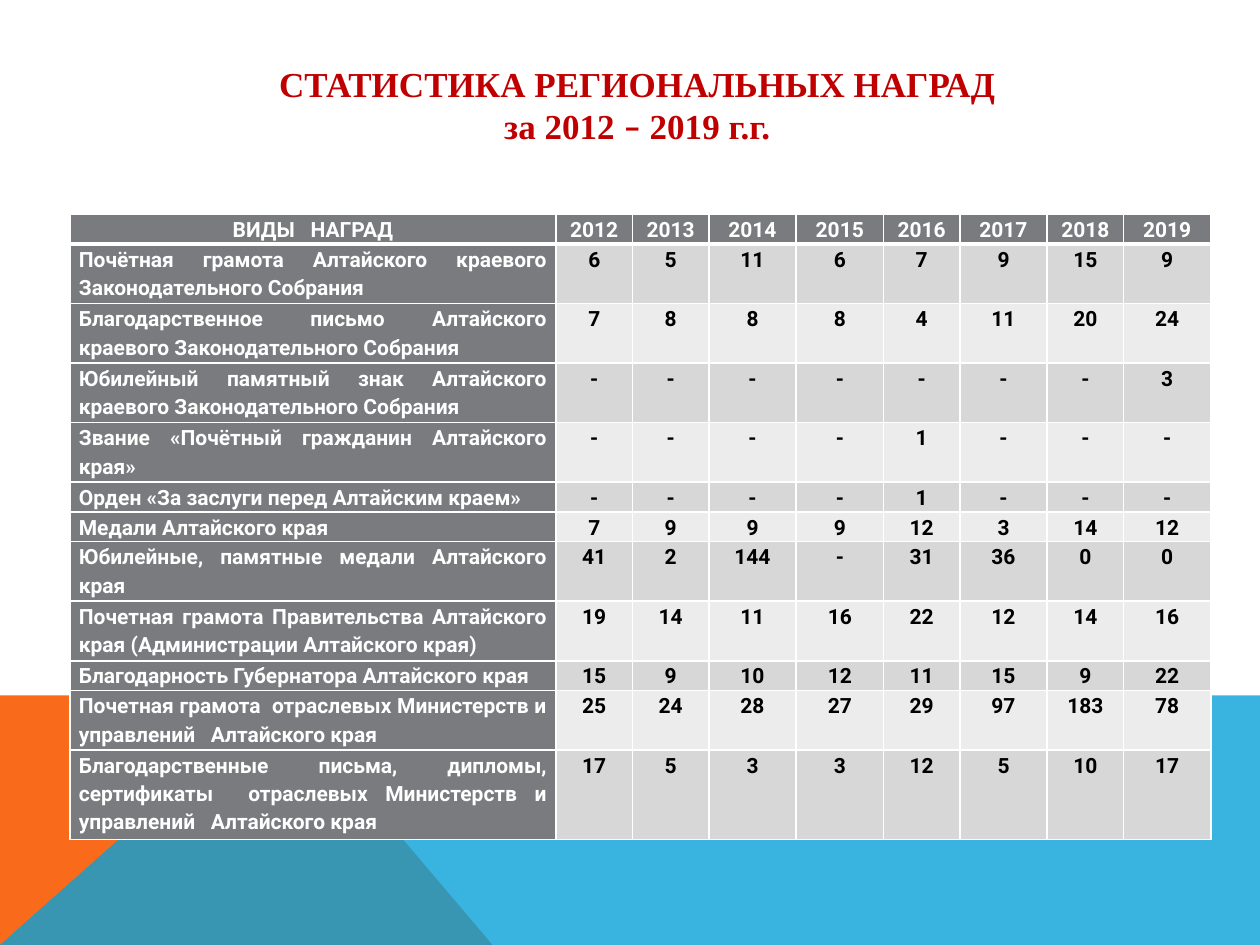
from typing import NamedTuple

from lxml import etree
from pptx import Presentation
from pptx import util as u
from pptx.dml.color import RGBColor
from pptx.enum import text
from pptx.oxml.ns import qn

ROBOTO, TIMES, CALIBRI = "Roboto", "Times New Roman", "Calibri"
WHITE, BLACK, RED = "FFFFFF", "000000", "C00000"
GREY, BANDS = "797B7E", ("D7D7D8", "ECECEC")
ORANGE, BLUE = "F96A1B", "08A1D9"
CENTER, JUSTIFY = text.PP_ALIGN.CENTER, text.PP_ALIGN.JUSTIFY
WIDTH, HEIGHT = 25.4, 19.05
LINE_HEIGHT = 0.6
COLUMNS = (9.8, 1.54, 1.54, 1.76, 1.76, 1.54, 1.76, 1.54, 1.76)


class Award(NamedTuple):
    name: str
    lines: int
    counts: str


class Band(NamedTuple):
    points: tuple[tuple[float, float], ...]
    color: str
    opacity: int


HEADER = Award("ВИДЫ   НАГРАД", 1, "2012 2013 2014 2015 2016 2017 2018 2019")
AWARDS = (
    Award("Почётная грамота Алтайского краевого Законодательного Собрания",
          2, "6 5 11 6 7 9 15 9"),
    Award("Благодарственное письмо Алтайского краевого Законодательного Собрания",
          2, "7 8 8 8 4 11 20 24"),
    Award("Юбилейный памятный знак Алтайского краевого Законодательного Собрания",
          2, "- - - - - - - 3"),
    Award("Звание «Почётный гражданин Алтайского края»", 2, "- - - - 1 - - -"),
    Award("Орден «За заслуги перед Алтайским краем»", 1, "- - - - 1 - - -"),
    Award("Медали Алтайского края", 1, "7 9 9 9 12 3 14 12"),
    Award("Юбилейные, памятные медали Алтайского края", 2, "41 2 144 - 31 36 0 0"),
    Award("Почетная грамота Правительства Алтайского края (Администрации Алтайского края)",
          2, "19 14 11 16 22 12 14 16"),
    Award("Благодарность Губернатора Алтайского края", 1, "15 9 10 12 11 15 9 22"),
    Award("Почетная грамота  отраслевых Министерств и управлений   Алтайского края",
          2, "25 24 28 27 29 97 183 78"),
    Award("Благодарственные письма, дипломы, сертификаты  отраслевых Министерств "
          "и управлений   Алтайского края", 3, "17 5 3 3 12 5 10 17"),
)

BAND_TOP, FOLD = 14.02, 5.66
BANDS_BELOW = (
    Band(((0, HEIGHT), (0, BAND_TOP), (FOLD, BAND_TOP), (9.93, HEIGHT)), ORANGE, 100),
    Band(((0, HEIGHT), (FOLD, BAND_TOP), (WIDTH, BAND_TOP), (WIDTH, HEIGHT)), BLUE, 80),
)


def paint(fill, color: str) -> None:
    fill.solid()
    fill.fore_color.rgb = RGBColor.from_string(color)


def add_run(p, content: str, *, size: float, font: str, color: str) -> None:
    r = p.add_run()
    r.text = content
    r.font.size, r.font.name, r.font.bold = u.Pt(size), font, True
    r.font.color.rgb = RGBColor.from_string(color)


def draw_band(s, band: Band) -> None:
    start, *rest = [(u.Cm(x), u.Cm(y)) for x, y in band.points]
    builder = s.shapes.build_freeform(*start)
    builder.add_line_segments(rest, close=True)
    sp = builder.convert_to_shape()
    sp.shadow.inherit = False
    sp.line.fill.background()
    paint(sp.fill, band.color)
    if band.opacity < 100:
        clr = sp._element.spPr.find(".//" + qn("a:srgbClr"))
        etree.SubElement(clr, qn("a:alpha"), val=str(band.opacity * 1000))


def set_borders(cell, **widths: float) -> None:
    """Give the sides L, R, T and B white lines of the given point widths."""
    tc_pr = cell._tc.get_or_add_tcPr()
    for side, width in widths.items():
        ln = etree.SubElement(tc_pr, qn(f"a:ln{side}"), w=str(u.Pt(width)))
        fill = etree.SubElement(ln, qn("a:solidFill"))
        etree.SubElement(fill, qn("a:srgbClr"), val=WHITE)


def fill_cell(cell, content: str, *, fill: str, color: str, align,
              top: float, bottom: float) -> None:
    cell.margin_left = cell.margin_right = u.Cm(0.18)
    cell.margin_top = cell.margin_bottom = 0
    set_borders(cell, L=1, R=1, T=top, B=bottom)
    paint(cell.fill, fill)
    p = cell.text_frame.paragraphs[0]
    p.alignment, p.line_spacing = align, 1.15
    add_run(p, content, size=12, font=ROBOTO, color=color)


def draw_table(s) -> None:
    rows = (HEADER, *AWARDS)
    height = sum(row.lines for row in rows) * LINE_HEIGHT
    table = s.shapes.add_table(len(rows), len(COLUMNS), u.Cm(1.41), u.Cm(4.32),
                               u.Cm(sum(COLUMNS)), u.Cm(height)).table
    for column, width in zip(table.columns, COLUMNS):
        column.width = u.Cm(width)
    for i, row in enumerate(rows):
        table.rows[i].height = u.Cm(row.lines * LINE_HEIGHT)
        for j, content in enumerate((row.name, *row.counts.split())):
            dark = i == 0 or j == 0
            fill_cell(table.cell(i, j), content,
                      fill=GREY if dark else BANDS[(i - 1) % 2],
                      color=WHITE if dark else BLACK,
                      align=JUSTIFY if i and j == 0 else CENTER,
                      top=3 if i == 1 else 1, bottom=3 if i == 0 else 1)


def draw_title(s) -> None:
    tf = s.shapes.add_textbox(u.Cm(1.4), u.Cm(1.12), u.Cm(22.89), u.Cm(2.74)).text_frame
    tf.word_wrap = True
    tf.vertical_anchor = text.MSO_ANCHOR.TOP
    tf.margin_top = u.Cm(0.15)
    lines = (
        (("СТАТИСТИКА РЕГИОНАЛЬНЫХ НАГРАД", TIMES),),
        (("за 2012 ", TIMES), ("–", CALIBRI), (" 2019 г.г.", TIMES)),
    )
    for i, line in enumerate(lines):
        p = tf.add_paragraph() if i else tf.paragraphs[0]
        p.alignment = CENTER
        for content, font in line:
            add_run(p, content, size=20, font=font, color=RED)


def main() -> None:
    prs = Presentation()
    prs.slide_width, prs.slide_height = u.Cm(WIDTH), u.Cm(HEIGHT)
    s = prs.slides.add_slide(prs.slide_layouts[6])
    for band in BANDS_BELOW:
        draw_band(s, band)
    draw_table(s)
    draw_title(s)
    prs.save("out.pptx")


if __name__ == "__main__":
    main()
